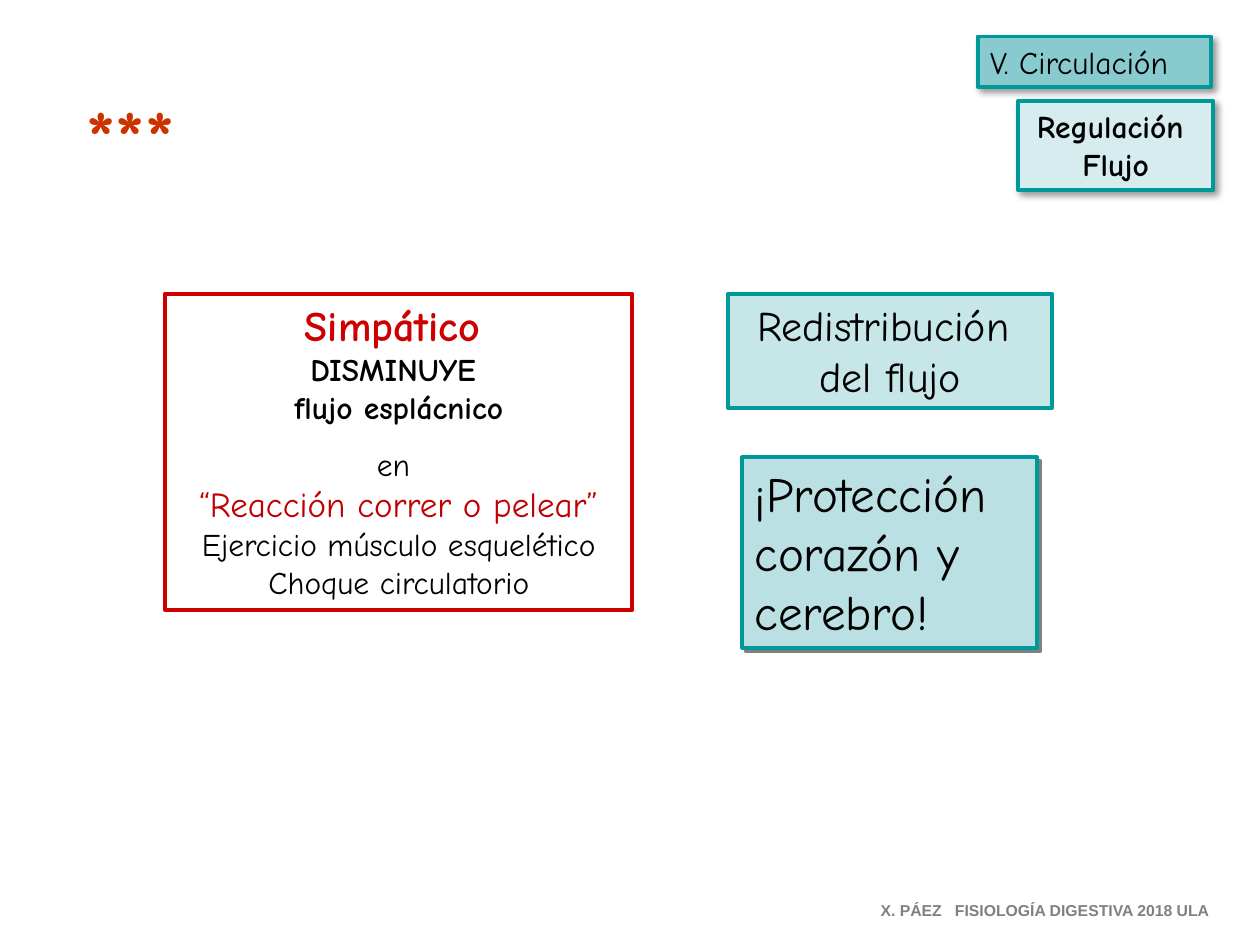
from lxml.etree import SubElement
from pptx import Presentation
from pptx.dml.color import RGBColor
from pptx.enum.shapes import MSO_SHAPE
from pptx.enum.text import MSO_ANCHOR, PP_ALIGN
from pptx.oxml.ns import qn
from pptx.util import Inches, Pt

TEAL = "009999"
RED = "CC0000"
HARD = ("808080", 100, 0, 2.8)
SOFT = ("000000", 40, 4, 3)


def rgb(color):
    return RGBColor.from_string(color)


def add_shadow(props, color, alpha, blur, dist):
    effects = props.find(qn("a:effectLst"))
    if effects is None:
        effects = SubElement(props, qn("a:effectLst"))
    shadow = SubElement(effects, qn("a:outerShdw"), blurRad=str(Pt(blur)),
                        dist=str(Pt(dist)), dir="2700000", algn="tl", rotWithShape="0")
    clr = SubElement(shadow, qn("a:srgbClr"), val=color)
    SubElement(clr, qn("a:alpha"), val=str(alpha * 1000))


def add_run(p, text, size=18, color="000000", bold=False, font="Comic Neue",
            shadow=None, spacing=None):
    r = p.add_run()
    r.text = text
    r.font.size = Pt(size)
    r.font.bold = bold
    r.font.color.rgb = rgb(color)
    if shadow:
        add_shadow(r.font._element, *shadow)
    r.font.name = font
    if spacing:
        r.font._element.set("spc", str(spacing * 100))
    return r


def add_lines(tf, lines, align=PP_ALIGN.LEFT, **fmt):
    tf.word_wrap = True
    tf.vertical_anchor = MSO_ANCHOR.TOP
    for i, text in enumerate(lines):
        p = tf.paragraphs[0] if i == 0 else tf.add_paragraph()
        p.alignment = align
        add_run(p, text, **fmt)


def add_box(s, box, line=TEAL, fill=None, shadow=None):
    sp = s.shapes.add_shape(MSO_SHAPE.RECTANGLE, *map(Inches, box))
    sp.shadow.inherit = False
    if fill:
        sp.fill.solid()
        sp.fill.fore_color.rgb = rgb(fill)
    else:
        sp.fill.background()
    sp.line.color.rgb = rgb(line)
    sp.line.width = Pt(2.25)
    if shadow:
        add_shadow(sp._element.spPr, *shadow)
    return sp.text_frame


def add_text(s, box):
    tf = s.shapes.add_textbox(*map(Inches, box)).text_frame
    tf.word_wrap = True
    return tf


def add_sympathetic(s, box):
    tf = add_box(s, box, line=RED)
    add_lines(tf, ["Simpático"], PP_ALIGN.CENTER, size=24, color=RED, bold=True)
    add_run(tf.paragraphs[0], " ", size=20, bold=True)
    for text, fmt in [
        ("DISMINUYE ", {"bold": True}),
        ("flujo esplácnico", {"bold": True}),
        ("en ", {}),
        ("“Reacción correr o pelear”", {"size": 20, "color": "C00000"}),
        ("Ejercicio músculo esquelético", {}),
        ("Choque circulatorio", {}),
    ]:
        p = tf.add_paragraph()
        p.alignment = PP_ALIGN.CENTER
        add_run(p, text, **fmt)
    tf.paragraphs[3].space_before = Pt(11)


def add_effects(s, flow_box, protection_box):
    add_lines(add_box(s, protection_box, fill="BBE0E3", shadow=HARD),
              ["¡Protección", "corazón y", "cerebro!"], size=28)
    add_lines(add_box(s, flow_box, fill="C6E6E8"),
              ["Redistribución ", "del flujo"], PP_ALIGN.CENTER, size=24)


def add_headings(s, chapter_box, topic_box):
    add_lines(add_box(s, chapter_box, fill="89CACF", shadow=SOFT), ["V. Circulación"])
    add_lines(add_box(s, topic_box, fill="D6ECEE", shadow=SOFT),
              ["Regulación ", "Flujo"], PP_ALIGN.CENTER, bold=True)


def add_stars(s, box):
    add_lines(add_text(s, box), ["***"], size=44, color="CC3300", bold=True,
              shadow=("000000", 100, 0, 3))


def add_footer(s, box):
    p = add_text(s, box).paragraphs[0]
    fmt = {"size": 9, "color": "808080", "bold": True, "font": "Arial"}
    add_run(p, "X. PÁEZ", **fmt)
    add_run(p, " ", spacing=5, **fmt)
    add_run(p, "FISIOLOGÍA DIGESTIVA 2018 ULA", **fmt)


def main():
    prs = Presentation()
    prs.slide_width, prs.slide_height = Inches(10), Inches(7.5)
    s = prs.slides.add_slide(prs.slide_layouts[6])
    add_sympathetic(s, (1.31, 2.33, 3.71, 2.51))
    add_effects(s, (5.78, 2.33, 2.57, 0.91), (5.89, 3.63, 2.34, 1.51))
    add_stars(s, (0.59, 0.65, 1.18, 0.84))
    add_headings(s, (7.76, 0.29, 1.85, 0.4), (8.08, 0.8, 1.55, 0.71))
    add_footer(s, (6.89, 7.1, 2.92, 0.25))
    prs.save("out.pptx")


if __name__ == "__main__":
    main()
